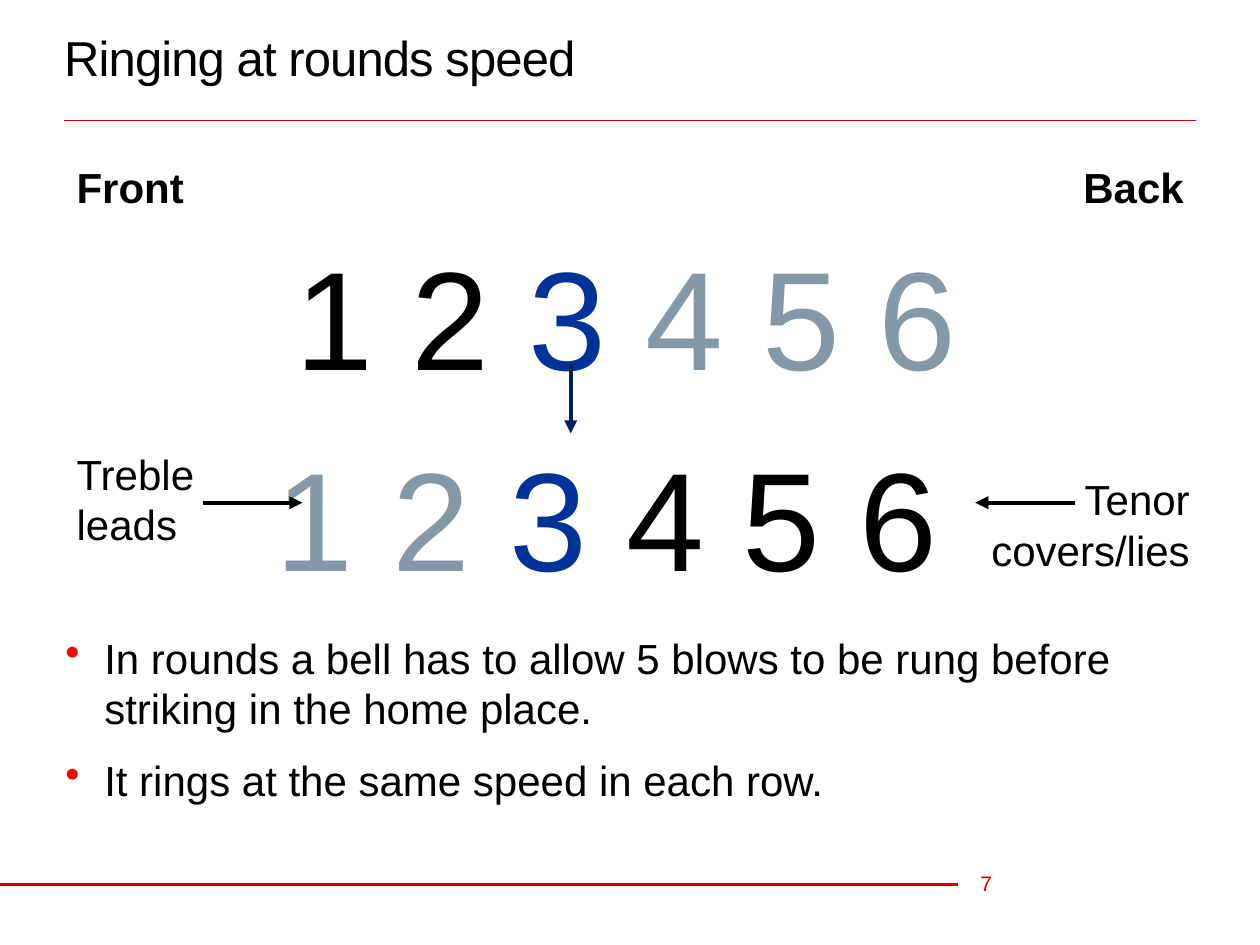
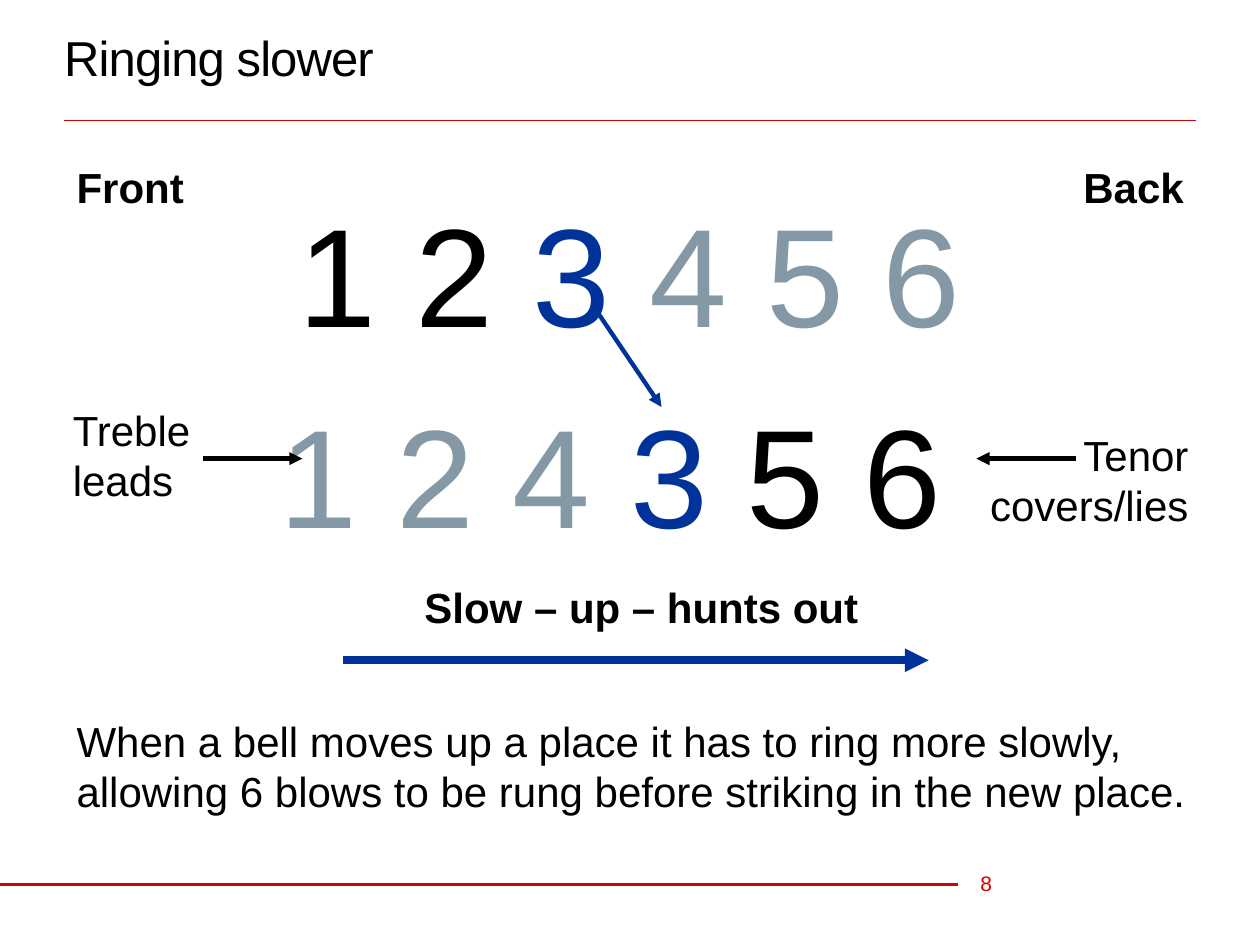
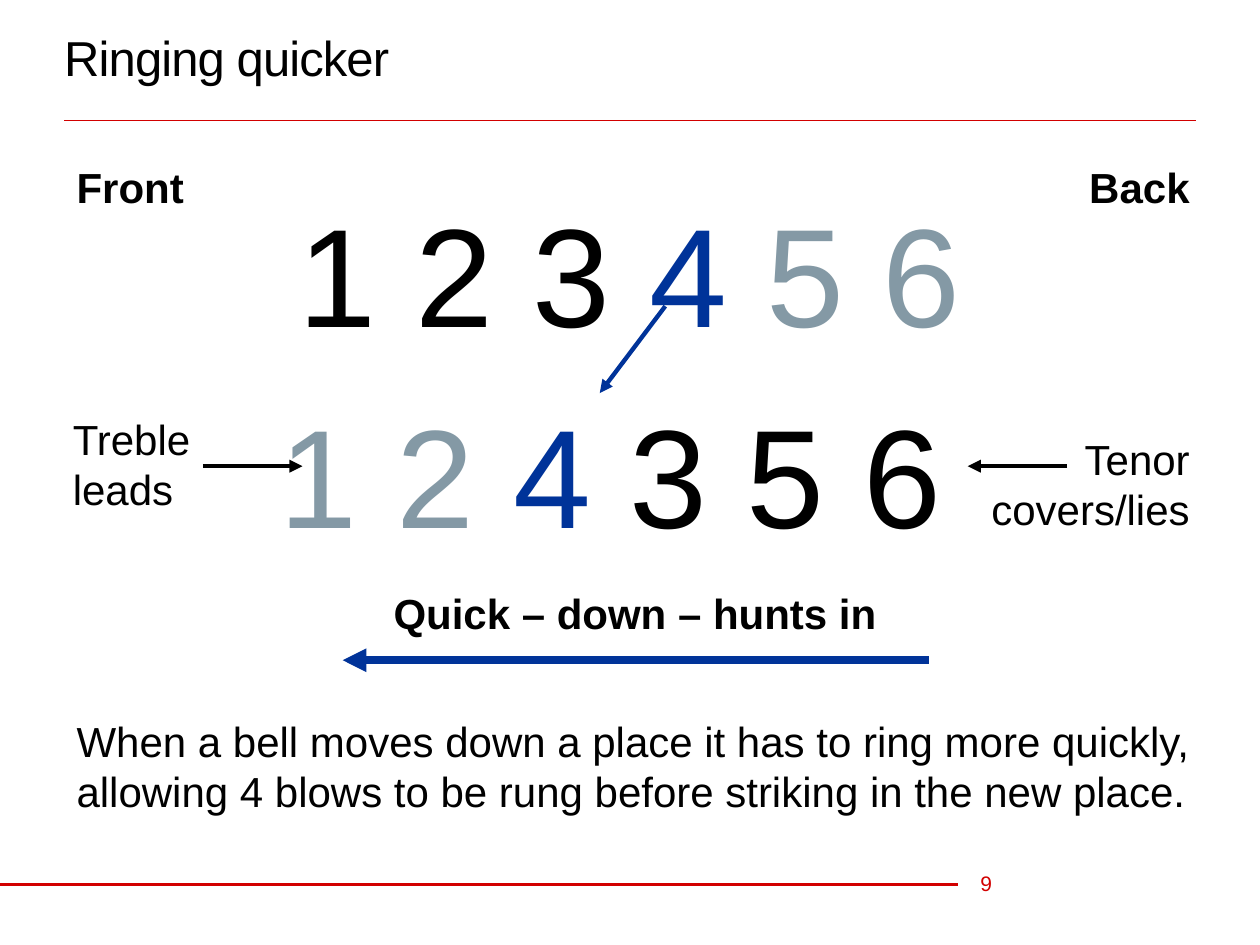
import pptx
import pptx.dml.color
import pptx.enum.shapes
import pptx.enum.text
import pptx.oxml.ns
import pptx.util
from lxml import etree

# Content
SLIDES = [
    dict(
        num=7, title="Ringing at rounds speed",
        body=(0.48, 1.56, 8.98, 2.73),
        rows=[[("1 2 ", "ink"), ("3 ", "blue"), ("4 5 6", "grey")],
              [("1 2 ", "grey"), ("3", "blue"), (" 4 5 6 ", "ink")]],
        back=(8.5, 1.04, "left"),
        treble=(0.51, 3.51, 1.81), tenor=(7.52, 3.71, 2.02),
        level=3.99, lie=8.53,
        move=(4.53, 2.89, 4.53, 3.44), hue="navy",
        points=["In rounds a bell has to allow 5 blows to be rung before "
                "striking in the home place.",
                "It rings at the same speed in each row."],
    ),
    dict(
        num=8, title="Ringing slower",
        body=(0.51, 1.22, 8.98, 5.2),
        rows=[[("1 2 ", "ink"), ("3 ", "blue"), ("4 5 6", "grey")],
              [("1 2 4 ", "grey"), ("3", "blue"), (" 5 6 ", "ink")]],
        back=(8.5, 1.04, "left"),
        treble=(0.48, 3.16, 1.5), tenor=(7.61, 3.36, 1.92),
        level=3.64, lie=8.54,
        move=(4.75, 2.49, 5.25, 3.23), hue="blue",
        hunt=("Slow – up – hunts out", (3.27, 4.57, 3.78, 0.5), "left"),
        course=(2.72, 7.37),
        note="When a bell moves up a place it has to ring more slowly, "
             "allowing 6 blows to be rung before striking in the new place.",
    ),
    dict(
        num=9, title="Ringing quicker",
        body=(0.51, 1.22, 8.98, 5.2),
        rows=[[("1 2 3 ", "ink"), ("4 ", "blue"), ("5 6", "grey")],
              [("1 2 ", "grey"), ("4", "blue"), (" 3 5 6 ", "ink")]],
        back=(8.31, 1.23, "right"),
        treble=(0.48, 3.23, 1.5), tenor=(7.57, 3.39, 1.97),
        level=3.7, lie=8.47,
        move=(5.28, 2.43, 4.76, 3.12), hue="blue",
        hunt=("Quick – down – hunts in", (2.4, 4.61, 5.28, 0.5), "center"),
        course=(7.37, 2.72),
        note="When a bell moves down a place it has to ring more quickly, "
             "allowing 4 blows to be rung before striking in the new place.",
    ),
]

# Shared look
WIDE, HIGH = 10, 7.5
EDGE = 0.51
SPAN = WIDE - 2 * EDGE
REACH = 0.79
HEX = dict(ink="000000", blue="003399", grey="8499A5", navy="002060",
           rule="D20000", dot="FF0000")
ALIGN = dict(left=pptx.enum.text.PP_ALIGN.LEFT,
             center=pptx.enum.text.PP_ALIGN.CENTER,
             right=pptx.enum.text.PP_ALIGN.RIGHT)
MIDDLE = pptx.enum.text.MSO_ANCHOR.MIDDLE
FLUSH = dict(margin_left=0, margin_right=0, margin_top=0, margin_bottom=0)

inch = pptx.util.Inches
qn = pptx.oxml.ns.qn


def tint(name):
    return pptx.dml.color.RGBColor.from_string(HEX[name])


def apply(item, form):
    for key, val in form.items():
        setattr(item, key, val)


def style(font, size, hue="ink", bold=False):
    apply(font, dict(name="Arial", size=pptx.util.Pt(size), bold=bold))
    font.color.rgb = tint(hue)


def box(slide, place, **form):
    frame = slide.shapes.add_textbox(*map(inch, place)).text_frame
    apply(frame, dict(word_wrap=True) | form)
    return frame


def label(slide, text, place, size=24, hue="ink", bold=False, align="left",
          **form):
    para = box(slide, place, **form).paragraphs[0]
    para.alignment = ALIGN[align]
    run = para.add_run()
    run.text = text
    style(run.font, size, hue, bold)


def line(slide, ends, hue, width, arrow=True):
    kind = pptx.enum.shapes.MSO_CONNECTOR.STRAIGHT
    link = slide.shapes.add_connector(kind, *map(inch, ends))
    link.line.color.rgb = tint(hue)
    link.line.width = pptx.util.Pt(width)
    props = link._element.spPr
    if arrow:
        etree.SubElement(props.find(qn("a:ln")), qn("a:tailEnd"),
                         type="triangle")
    etree.SubElement(props, qn("a:effectLst"))


# Title, rules and page number
def base(deck, data):
    slide = deck.slides.add_slide(deck.slide_layouts[5])
    head = slide.shapes.title
    apply(head, dict(left=inch(EDGE), top=inch(0.05),
                     width=inch(SPAN), height=inch(0.81)))
    apply(head.text_frame, FLUSH | dict(
        vertical_anchor=MIDDLE, word_wrap=True,
        auto_size=pptx.enum.text.MSO_AUTO_SIZE.NONE))
    para = head.text_frame.paragraphs[0]
    para.alignment = ALIGN["left"]
    run = para.add_run()
    run.text = data["title"]
    style(run.font, 28)
    run._r.get_or_add_rPr().set("spc", "-50")
    line(slide, (EDGE, 0.96, WIDE - EDGE, 0.96), "rule", 0.5, False)
    line(slide, (0, 7.02, 7.6, 7.02), "rule", 2, False)
    label(slide, str(data["num"]), (7.78, 6.81, 0.51, 0.4), 12, "rule",
          vertical_anchor=MIDDLE, **FLUSH)
    return slide


# Two rows of bells
def bells(slide, data):
    para = box(slide, data["body"], **FLUSH).paragraphs[0]
    apply(para, dict(alignment=ALIGN["center"], line_spacing=1.2))
    for at, row in enumerate(data["rows"]):
        if at:
            para.add_line_break()
        for text, hue in row:
            run = para.add_run()
            run.text = text
            style(run.font, 80, hue)


# Labels and arrows around the rows
def marks(slide, data):
    left, width, align = data["back"]
    label(slide, "Front", (EDGE, 1.23, 1.26, 0.5), bold=True)
    label(slide, "Back", (left, 1.23, width, 0.5), bold=True, align=align)
    label(slide, "Treble leads", (*data["treble"], 0.91))
    label(slide, "Tenor covers/lies", (*data["tenor"], 0.91), align="right")
    y, lie = data["level"], data["lie"]
    line(slide, (1.61, y, 1.61 + REACH, y), "ink", 2.5)
    line(slide, (lie, y, lie - REACH, y), "ink", 2.5)
    line(slide, data["move"], data["hue"], 2.5)


# Hunting direction and its rule
def hunt(slide, data):
    text, place, align = data["hunt"]
    label(slide, text, place, bold=True, align=align)
    start, end = data["course"]
    line(slide, (start, 5.24, end, 5.24), "blue", 4.5)
    label(slide, data["note"], (EDGE, 5.63, 9.3, 0.91))


# Bulleted points
def points(slide, texts):
    frame = box(slide, (0.42, 4.97, 9.03, 1.51))
    for at, text in enumerate(texts):
        para = frame.add_paragraph() if at else frame.paragraphs[0]
        props = para._p.get_or_add_pPr()
        apply_in = inch(0.31)
        props.set("marL", str(apply_in))
        props.set("indent", str(-apply_in))
        color = etree.SubElement(props, qn("a:buClr"))
        etree.SubElement(color, qn("a:srgbClr"), val=HEX["dot"])
        etree.SubElement(props, qn("a:buChar"), char="•")
        if at:
            para.space_before = pptx.util.Pt(12)
        run = para.add_run()
        run.text = text
        style(run.font, 24)


def main():
    deck = pptx.Presentation()
    apply(deck, dict(slide_width=inch(WIDE), slide_height=inch(HIGH)))
    for data in SLIDES:
        slide = base(deck, data)
        bells(slide, data)
        marks(slide, data)
        if "points" in data:
            points(slide, data["points"])
        else:
            hunt(slide, data)
    deck.save("out.pptx")


if __name__ == "__main__":
    main()
